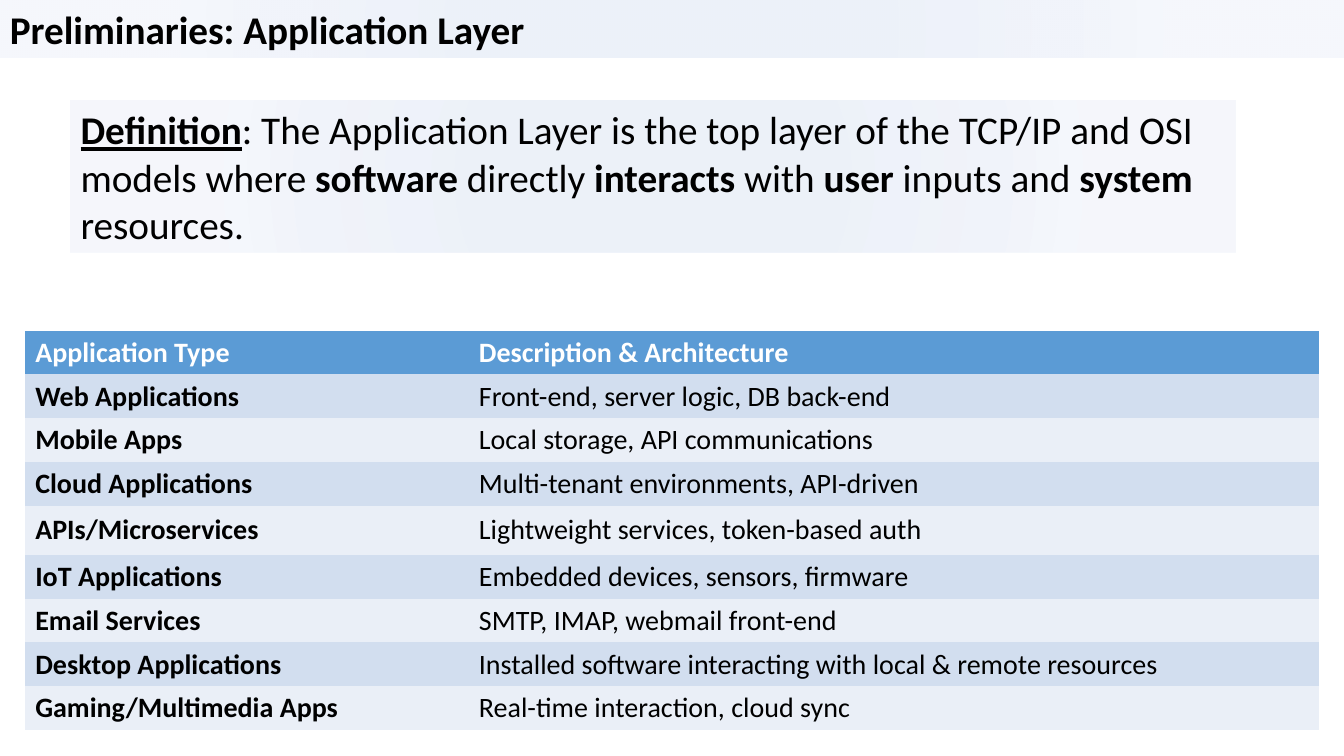
from lxml import etree
from pptx import Presentation
from pptx.dml.color import RGBColor
from pptx.enum import shapes, text
from pptx.oxml import parse_xml
from pptx.oxml.ns import qn
from pptx.util import Inches, Pt

FONT = "Calibri"
BLACK = RGBColor(0x00, 0x00, 0x00)
WHITE = RGBColor(0xFF, 0xFF, 0xFF)
HEADER_BLUE = RGBColor(0x5B, 0x9B, 0xD5)
BAND_DARK = RGBColor(0xD2, 0xDE, 0xEF)
BAND_LIGHT = RGBColor(0xEA, 0xEF, 0xF7)
TINT = RGBColor(0x44, 0x72, 0xC4)

DRAWING_NS = "http://schemas.openxmlformats.org/drawingml/2006/main"
PLAIN_TABLE_STYLE = "{2D5ABB26-0587-4C30-8999-92F81FD0307C}"

TITLE = [("Preliminaries: Application Layer", True, False)]
# Each run: wording, bold, underlined
DEFINITION = [
    ("Definition", True, True),
    (": The Application Layer is the top layer of the TCP/IP and OSI models where ", False, False),
    ("software", True, False),
    (" directly ", False, False),
    ("interacts", True, False),
    (" with ", False, False),
    ("user", True, False),
    (" inputs and ", False, False),
    ("system", True, False),
    (" resources.", False, False),
]
APPLICATIONS = [
    ("Application Type", "Description & Architecture"),
    ("Web Applications", "Front-end, server logic, DB back-end"),
    ("Mobile Apps", "Local storage, API communications"),
    ("Cloud Applications", "Multi-tenant environments, API-driven"),
    ("APIs/Microservices", "Lightweight services, token-based auth"),
    ("IoT Applications", "Embedded devices, sensors, firmware"),
    ("Email Services", "SMTP, IMAP, webmail front-end"),
    ("Desktop Applications", "Installed software interacting with local & remote resources"),
    ("Gaming/Multimedia Apps", "Real-time interaction, cloud sync"),
]
COLUMN_WIDTHS = [4.4, 8.43]
ROW_HEIGHTS = [0.39] * 4 + [0.49, 0.39] + [0.37] * 3


def add_run(paragraph, wording, size, color, bold, underline=False):
    run = paragraph.add_run()
    run.text = wording
    font = run.font
    font.name, font.size, font.bold = FONT, Pt(size), bold
    font.underline = underline
    font.color.rgb = color


def fill_with_tint(panel):
    """Give the panel a radial gradient from 10% to 5% opaque blue."""
    stops = "".join(
        f'<a:gs pos="{position * 1000}"><a:srgbClr val="{TINT}">'
        f'<a:alpha val="{opacity * 1000}"/></a:srgbClr></a:gs>'
        for position, opacity in [(26, 10), (76, 5)]
    )
    gradient = parse_xml(
        f'<a:gradFill xmlns:a="{DRAWING_NS}" rotWithShape="1"><a:gsLst>{stops}</a:gsLst>'
        '<a:path path="circle"><a:fillToRect l="0" t="0" r="0" b="0"/></a:path></a:gradFill>'
    )
    panel.fill.background()
    properties = panel._element.spPr
    properties.replace(properties.find(qn("a:noFill")), gradient)


def add_tinted_panel(slide, left, top, width, height, runs):
    panel = slide.shapes.add_shape(
        shapes.MSO_SHAPE.RECTANGLE,
        Inches(left), Inches(top), Inches(width), Inches(height),
    )
    panel.shadow.inherit = False
    panel.line.fill.background()
    fill_with_tint(panel)
    frame = panel.text_frame
    frame.word_wrap = True
    frame.auto_size = text.MSO_AUTO_SIZE.SHAPE_TO_FIT_TEXT
    frame.vertical_anchor = text.MSO_ANCHOR.TOP
    paragraph = frame.paragraphs[0]
    paragraph.alignment = text.PP_ALIGN.LEFT
    for wording, bold, underline in runs:
        add_run(paragraph, wording, 28, BLACK, bold, underline)


def add_application_table(slide, left, top):
    frame = slide.shapes.add_table(
        len(APPLICATIONS), len(COLUMN_WIDTHS), Inches(left), Inches(top),
        Inches(sum(COLUMN_WIDTHS)), Inches(sum(ROW_HEIGHTS)),
    )
    table = frame.table
    table._tbl.tblPr.find(qn("a:tableStyleId")).text = PLAIN_TABLE_STYLE
    for column, width in zip(table.columns, COLUMN_WIDTHS):
        column.width = Inches(width)
    for row_index, (row, wordings) in enumerate(zip(table.rows, APPLICATIONS)):
        row.height = Inches(ROW_HEIGHTS[row_index])
        is_header = row_index == 0
        band = BAND_DARK if row_index % 2 else BAND_LIGHT
        for column_index, (cell, wording) in enumerate(zip(row.cells, wordings)):
            cell.fill.solid()
            cell.fill.fore_color.rgb = HEADER_BLUE if is_header else band
            cell.vertical_anchor = text.MSO_ANCHOR.MIDDLE
            add_run(
                cell.text_frame.paragraphs[0], wording, 20,
                WHITE if is_header else BLACK, is_header or column_index == 0,
            )


def main():
    deck = Presentation()
    deck.slide_width, deck.slide_height = Inches(13.33), Inches(7.5)
    slide = deck.slides.add_slide(deck.slide_layouts[6])
    add_tinted_panel(slide, 0, 0, 13.33, 0.57, TITLE)
    add_application_table(slide, 0.25, 3.28)
    add_tinted_panel(slide, 0.7, 1, 11.55, 1.51, DEFINITION)
    deck.save("out.pptx")


if __name__ == "__main__":
    main()
